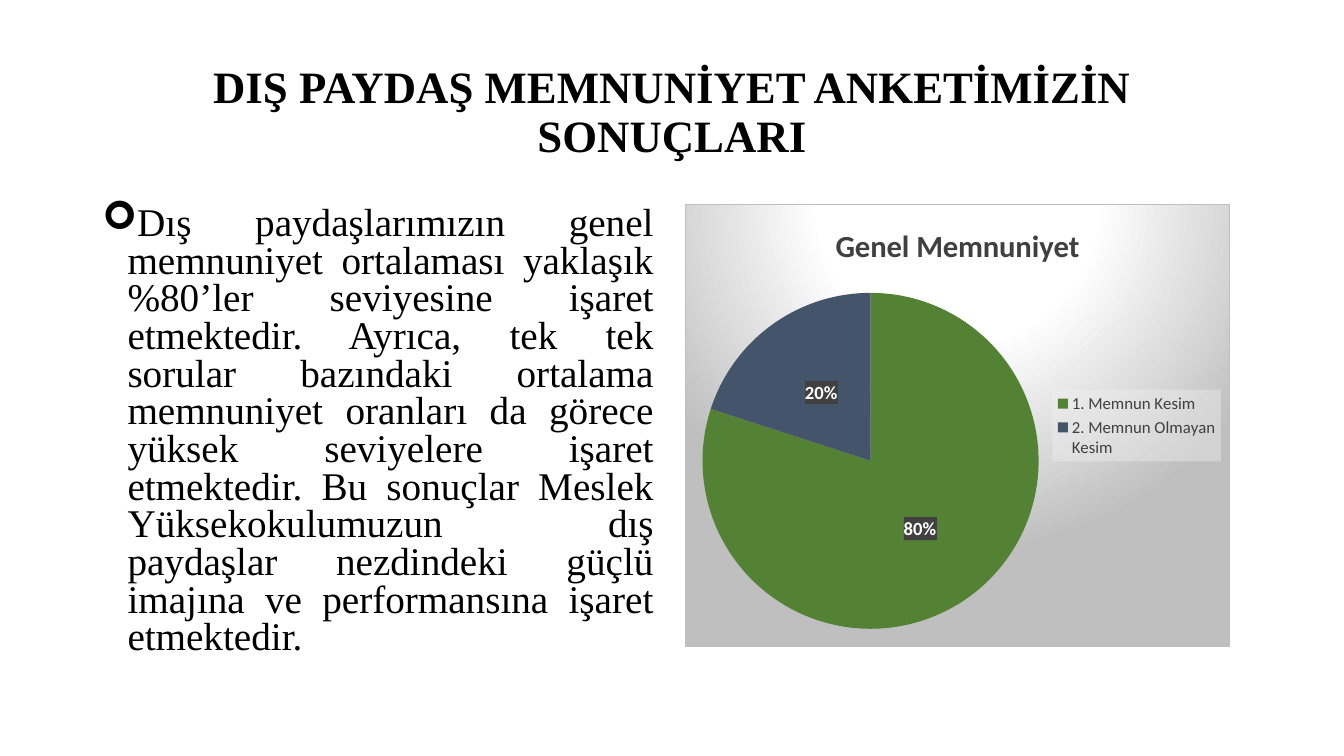
import pptx
import pptx.util
import pptx.dml.color
import pptx.chart.data
import pptx.enum.chart
import pptx.enum.text
import pptx.oxml
import pptx.oxml.ns

Pt = pptx.util.Pt
ALIGN = pptx.enum.text.PP_ALIGN
ANCHOR = pptx.enum.text.MSO_ANCHOR
SERIF = "Times New Roman"
SANS = "Calibri"
HUES = {"ink": "000000", "soft": "404040", "white": "FFFFFF", "grey": "BFBFBF",
        "pale": "F2F2F2", "green": "548235", "navy": "44546A"}
HEAD = "DIŞ PAYDAŞ MEMNUNİYET ANKETİMİZİN SONUÇLARI"
BODY = ("Dış paydaşlarımızın genel memnuniyet ortalaması yaklaşık %80’ler seviyesine "
        "işaret etmektedir. Ayrıca, tek tek sorular bazındaki ortalama memnuniyet "
        "oranları da görece yüksek seviyelere işaret etmektedir. Bu sonuçlar Meslek "
        "Yüksekokulumuzun dış paydaşlar nezdindeki güçlü imajına ve performansına "
        "işaret etmektedir.")
RATES = {"1. Memnun Kesim": (80, "green"), "2. Memnun Olmayan Kesim": (20, "navy")}


def hue(name):
    return pptx.dml.color.RGBColor.from_string(HUES[name])


def style(font, face, size, color, bold=False):
    font.name, font.size, font.bold = face, Pt(size), bold
    font.color.rgb = hue(color)


def node(xml):
    space = " ".join(pptx.oxml.ns.nsdecls(tag) for tag in "ac")
    head, rest = xml.split(">", 1)
    return pptx.oxml.parse_xml(f"{head} {space}>{rest}")


def solid(name, alpha=100):
    return (f'<a:solidFill><a:srgbClr val="{HUES[name]}">'
            f'<a:alpha val="{alpha * 1000}"/></a:srgbClr></a:solidFill>')


def text(slide, box, words, anchor):
    frame = slide.shapes.add_textbox(*map(Pt, box)).text_frame
    frame.word_wrap = True
    frame.vertical_anchor = anchor
    para = frame.paragraphs[0]
    para.text = words
    return para


def title(slide, box):
    para = text(slide, box, HEAD, ANCHOR.MIDDLE)
    para.alignment, para.line_spacing = ALIGN.CENTER, 0.9
    style(para.font, SERIF, 32, "ink", True)


def body(slide, box):
    para = text(slide, box, BODY, ANCHOR.TOP)
    para.alignment, para.line_spacing = ALIGN.JUSTIFY, 0.8
    props = para._p.get_or_add_pPr()
    props.set("marL", str(Pt(18)))
    props.set("indent", str(-Pt(18)))
    props.append(node('<a:buFont typeface="Wingdings"></a:buFont>'))
    props.append(node('<a:buChar char="➢"></a:buChar>'))
    style(para.font, SERIF, 28, "ink")


def panel(chart):
    stops = "".join(f'<a:gs pos="{pos * 1000}"><a:srgbClr val="{HUES[name]}"/></a:gs>'
                    for pos, name in ((0, "white"), (39, "white"), (100, "grey")))
    chart._chartSpace.chart.addnext(node(
        f'<c:spPr><a:gradFill><a:gsLst>{stops}</a:gsLst><a:path path="circle">'
        '<a:fillToRect l="50000" t="-80000" r="50000" b="180000"/></a:path></a:gradFill>'
        f'<a:ln w="{Pt(0.75)}">{solid("grey")}</a:ln></c:spPr>'))


def place(chart, x, y, w, h):
    area = chart._chartSpace.chart.plotArea
    for old in area.findall(pptx.oxml.ns.qn("c:layout")):
        area.remove(old)
    sizes = "".join(f'<c:{key} val="{val}"/>' for key, val in zip("xywh", (x, y, w, h)))
    area.insert(0, node(
        '<c:layout><c:manualLayout><c:layoutTarget val="inner"/><c:xMode val="edge"/>'
        f'<c:yMode val="edge"/>{sizes}</c:manualLayout></c:layout>'))


def labels(plot):
    plot.has_data_labels = True
    marks = plot.data_labels
    marks.show_percentage, marks.show_value = True, False
    marks.number_format, marks.number_format_is_linked = "0%", False
    marks.position = pptx.enum.chart.XL_LABEL_POSITION.CENTER
    style(marks.font, SANS, 13.3, "white", True)
    marks._element.find(pptx.oxml.ns.qn("c:txPr")).addprevious(node(
        '<c:spPr><a:pattFill prst="dkVert">'
        f'<a:fgClr><a:srgbClr val="{HUES["soft"]}"/></a:fgClr>'
        '<a:bgClr><a:srgbClr val="595959"/></a:bgClr></a:pattFill></c:spPr>'))


def legend(chart):
    chart.has_legend = True
    key = chart.legend
    key.position = pptx.enum.chart.XL_LEGEND_POSITION.RIGHT
    key.include_in_layout = False
    style(key.font, SANS, 12, "soft")
    key._element.find(pptx.oxml.ns.qn("c:txPr")).addprevious(
        node(f'<c:spPr>{solid("pale", 39)}</c:spPr>'))


def pie(slide, box):
    data = pptx.chart.data.CategoryChartData()
    data.categories = list(RATES)
    data.add_series("Genel Memnuniyet", [rate for rate, _ in RATES.values()])
    kind = pptx.enum.chart.XL_CHART_TYPE.PIE
    chart = slide.shapes.add_chart(kind, *map(Pt, box), data).chart
    style(chart.font, SANS, 10, "ink")
    chart.has_title = True
    para = chart.chart_title.text_frame.paragraphs[0]
    para.text = "Genel Memnuniyet"
    style(para.font, SANS, 22, "soft", True)
    plot = chart.plots[0]
    plot.vary_by_categories = True
    for spot, (_, name) in enumerate(RATES.values()):
        fill = plot.series[0].points[spot].format.fill
        fill.solid()
        fill.fore_color.rgb = hue(name)
    labels(plot)
    legend(chart)
    place(chart, 0.03, 0.2, 0.62, 0.76)
    panel(chart)


def main():
    """Build the survey slide and save it."""
    deck = pptx.Presentation()
    deck.slide_width, deck.slide_height = Pt(960), Pt(540)
    slide = deck.slides.add_slide(deck.slide_layouts[6])
    title(slide, (66, 28.75, 828, 104.4))
    body(slide, (66, 144, 408, 342.7))
    pie(slide, (489.5, 145.7, 389, 316.5))
    deck.save("out.pptx")


if __name__ == "__main__":
    main()
